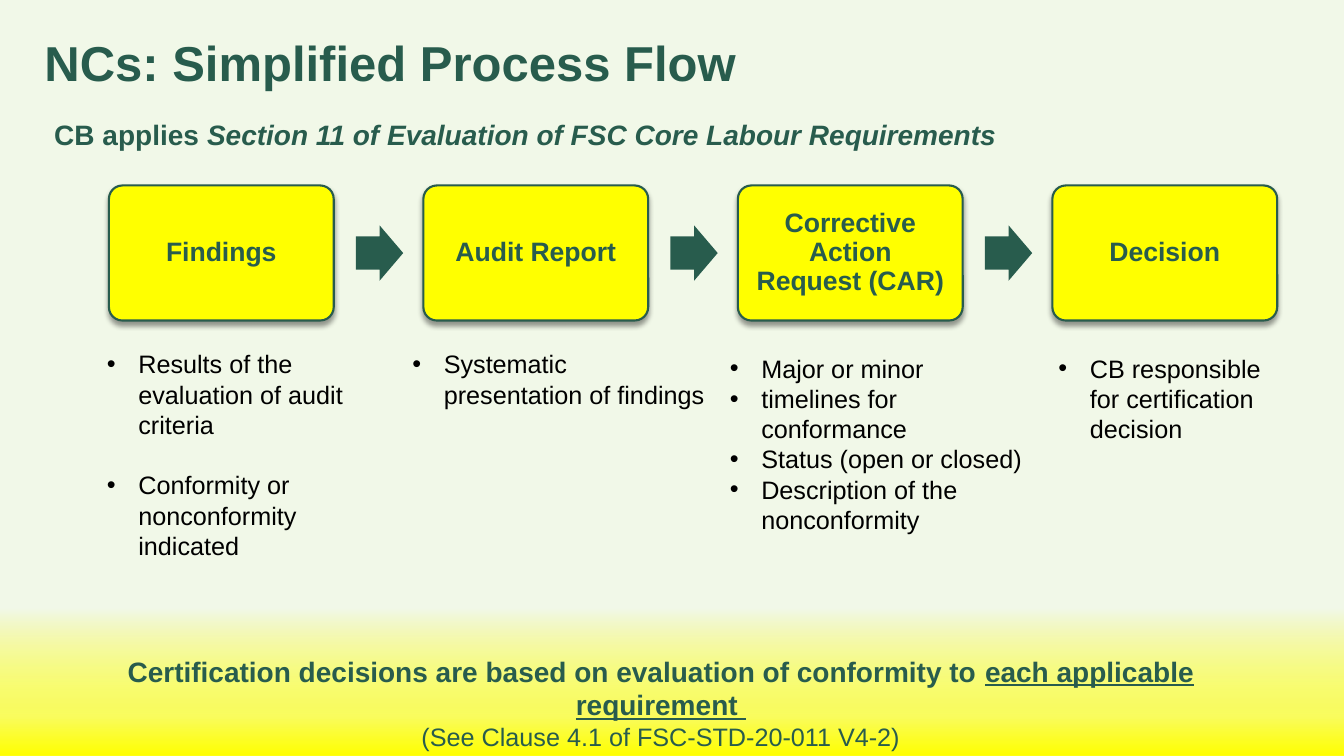
from pptx import Presentation, oxml
from pptx import util as u
from pptx.dml.color import RGBColor
from pptx.enum import shapes, text
from pptx.oxml import ns

GREEN = RGBColor(0x28, 0x5C, 0x4D)
YELLOW = RGBColor(0xFF, 0xFF, 0x00)
PALE = RGBColor(0xF1, 0xF8, 0xE8)
BLACK = RGBColor(0, 0, 0)

STEP_PITCH = 224.64
STEP_TOP, STEP_WIDTH, STEP_HEIGHT = 132.5, 160.6, 96.5
LIST_INDENT = 22.5
LIST_GAP = 21.6


class ProcessSlide:
    """Holds the shared style and the current slide."""
    font_name = "Arial"

    def __init__(self, slide):
        self.slide = slide
        slide.background.fill.solid()
        slide.background.fill.fore_color.rgb = PALE

    def place(self, item, left, top, width, height):
        item.left, item.top = u.Pt(left), u.Pt(top)
        item.width, item.height = u.Pt(width), u.Pt(height)

    def frame(self, item, inset_x, inset_y, anchor=text.MSO_ANCHOR.TOP):
        frame = item.text_frame
        frame.word_wrap = True
        frame.auto_size = text.MSO_AUTO_SIZE.NONE
        frame.vertical_anchor = anchor
        frame.margin_left = frame.margin_right = u.Pt(inset_x)
        frame.margin_top = frame.margin_bottom = u.Pt(inset_y)
        return frame

    def run(self, paragraph, wording, size, color=GREEN, bold=False, italic=False, underline=False):
        run = paragraph.add_run()
        run.text = wording
        font = run.font
        font.name, font.size, font.color.rgb = self.font_name, u.Pt(size), color
        font.bold, font.italic, font.underline = bold, italic, underline

    def title(self, wording):
        title = self.slide.shapes.title
        self.place(title, 31.7, 31.7, 823, 31.7)
        paragraph = self.frame(title, 0, 0).paragraphs[0]
        paragraph.alignment = text.PP_ALIGN.LEFT
        paragraph.line_spacing = 0.8
        self.run(paragraph, wording, 35, bold=True)

    def bullet_list(self, index, left, top, width, height, items, gap=0):
        body = self.slide.placeholders[index]
        self.place(body, left, top, width, height)
        frame = self.frame(body, 7.2, 3.6)
        for number, item in enumerate(items):
            paragraph = frame.add_paragraph() if number else frame.paragraphs[0]
            properties = paragraph._p.get_or_add_pPr()
            properties.set("marL", str(u.Pt(LIST_INDENT)))
            properties.set("indent", str(-u.Pt(LIST_INDENT)))
            for bullet in ('<a:buClr %s><a:srgbClr val="000000"/></a:buClr>',
                           '<a:buFont %s typeface="Arial"/>', '<a:buChar %s char="•"/>'):
                properties.append(oxml.parse_xml(bullet % ns.nsdecls("a")))
            paragraph.space_before = u.Pt(gap if number else 0)
            self.run(paragraph, item, 18, BLACK)

    def text_box(self, left, top, width, height, lines, align=text.PP_ALIGN.LEFT):
        box = self.slide.shapes.add_textbox(u.Pt(left), u.Pt(top), u.Pt(width), u.Pt(height))
        frame = self.frame(box, 7.2, 3.6)
        for number, runs in enumerate(lines):
            paragraph = frame.add_paragraph() if number else frame.paragraphs[0]
            paragraph.alignment = align
            for wording, size, style in runs:
                self.run(paragraph, wording, size, **style)

    def shape(self, kind, left, top, width, height, fill, adjustments=()):
        shape = self.slide.shapes.add_shape(kind, u.Pt(left), u.Pt(top), u.Pt(width), u.Pt(height))
        shape.shadow.inherit = False
        shape.fill.solid()
        shape.fill.fore_color.rgb = fill
        shape.line.fill.background()
        for number, value in enumerate(adjustments):
            shape.adjustments[number] = value
        return shape

    def step(self, left, label):
        step = self.shape(shapes.MSO_SHAPE.ROUNDED_RECTANGLE, left, STEP_TOP,
                          STEP_WIDTH, STEP_HEIGHT, YELLOW, [0.1])
        step.line.color.rgb = GREEN
        step.line.width = u.Pt(1.5)
        effects = step._element.spPr.find(ns.qn("a:effectLst"))
        effects.append(oxml.parse_xml(
            f'<a:outerShdw {ns.nsdecls("a")} blurRad="{u.Pt(4)}" dist="{u.Pt(3)}" dir="5400000" '
            'rotWithShape="0"><a:srgbClr val="000000"><a:alpha val="40000"/></a:srgbClr></a:outerShdw>'))
        paragraph = self.frame(step, 8.6, 8.6, text.MSO_ANCHOR.MIDDLE).paragraphs[0]
        paragraph.alignment = text.PP_ALIGN.CENTER
        paragraph.line_spacing = 0.9
        self.run(paragraph, label, 19, bold=True)

    def arrow(self, left):
        height = 39.6
        self.shape(shapes.MSO_SHAPE.RIGHT_ARROW, left, STEP_TOP + (STEP_HEIGHT - height) / 2,
                   33.8, height, GREEN, [0.6, 0.5])

    def gradient_band(self, left, top, width, height, stops):
        band = self.shape(shapes.MSO_SHAPE.RECTANGLE, left, top, width, height, PALE)
        stop_xml = "".join(
            f'<a:gs pos="{position * 1000}"><a:srgbClr val="{color}">'
            f'<a:alpha val="{opacity * 1000}"/></a:srgbClr></a:gs>'
            for position, color, opacity in stops)
        properties = band._element.spPr
        properties.replace(properties.find(ns.qn("a:solidFill")), oxml.parse_xml(
            f'<a:gradFill {ns.nsdecls("a")} rotWithShape="1"><a:gsLst>{stop_xml}</a:gsLst>'
            '<a:lin ang="5400000" scaled="0"/></a:gradFill>'))


def main():
    deck = Presentation()
    deck.slide_width, deck.slide_height = u.Pt(960), u.Pt(540)
    comparison_layout = deck.slide_layouts[4]
    page = ProcessSlide(deck.slides.add_slide(comparison_layout))

    # Heading
    page.title("NCs: Simplified Process Flow")
    page.text_box(31.7, 80.6, 851.8, 31.7, [[
        ("CB applies ", 20, {"bold": True}),
        ("Section 11 of Evaluation of FSC Core Labour Requirements", 20,
         {"bold": True, "italic": True})]])

    # Process steps, with an arrow between neighbours
    step_labels = ["Findings", "Audit Report", "Corrective Action Request (CAR)", "Decision"]
    for number, label in enumerate(step_labels):
        left = 77.8 + number * STEP_PITCH
        if number:
            page.arrow(left - 48.2)
        page.step(left, label)

    # Details under each step
    page.bullet_list(1, 69.1, 245.5, 226.1, 159.8,
                     ["Results of the evaluation of audit criteria",
                      "Conformity or nonconformity indicated"], gap=LIST_GAP)
    page.bullet_list(2, 287.3, 245.5, 226.1, 72.7, ["Systematic presentation of findings"])
    page.bullet_list(3, 514.1, 248.6, 234.7, 138.2,
                     ["Major or minor", "timelines for conformance",
                      "Status (open or closed)", "Description of the nonconformity"])
    page.bullet_list(4, 748.8, 248.6, 179.3, 72.7, ["CB responsible for certification decision"])

    # Closing statement
    page.gradient_band(0, 434.9, 960, 105.1, [
        (0, PALE, 100), (73, YELLOW, 59), (83, YELLOW, 75), (100, YELLOW, 100)])
    page.text_box(31.7, 463.7, 880.6, 74.9, [
        [("Certification decisions are based on evaluation of conformity to ", 20, {"bold": True}),
         ("each applicable requirement ", 20, {"bold": True, "underline": True})],
        [("(See Clause 4.1 of FSC-STD-20-011 V4-2)", 18, {})]], text.PP_ALIGN.CENTER)

    deck.save("out.pptx")


if __name__ == "__main__":
    main()
